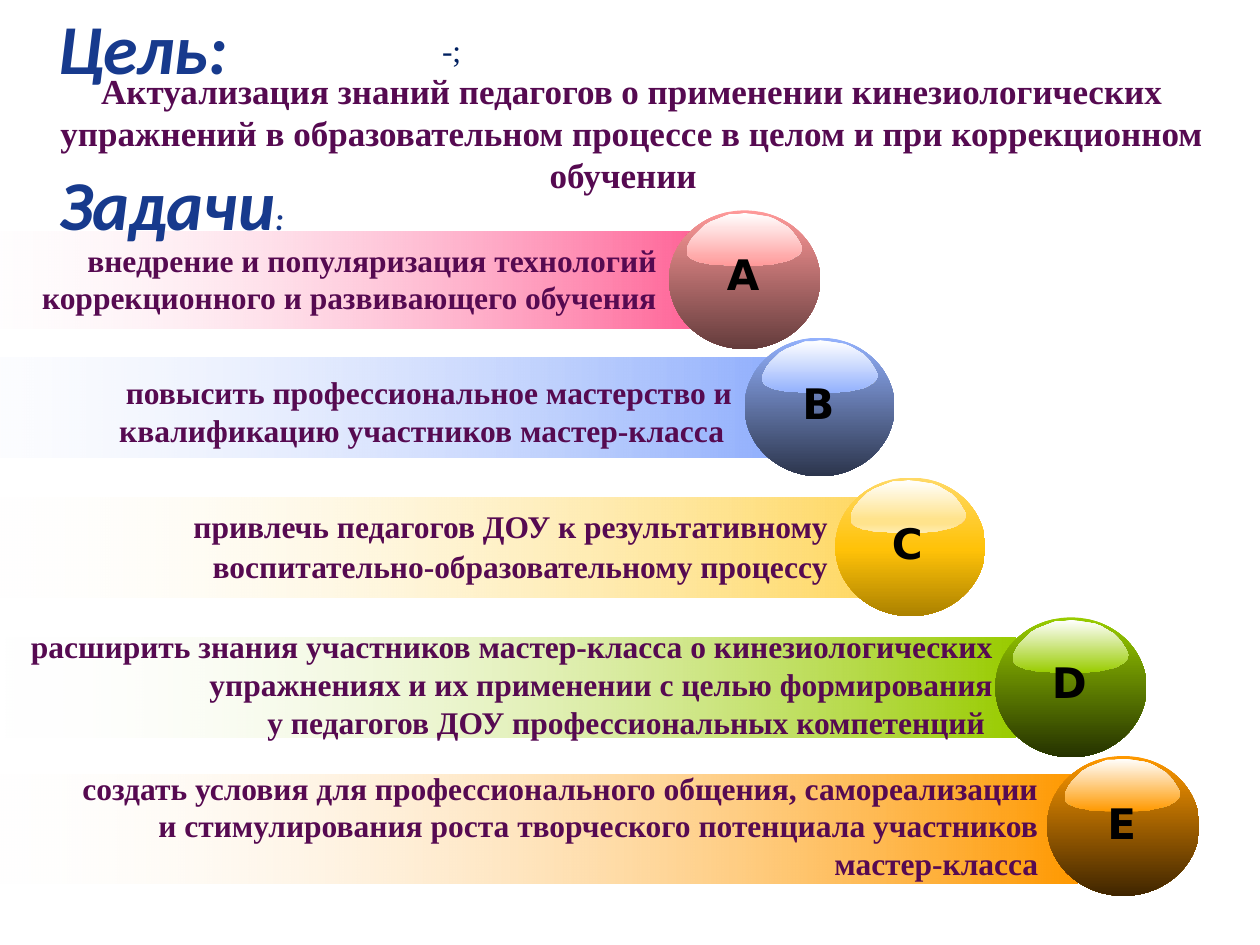
"""Build the slide with the goal and the five tasks of a master class."""
import pptx
import pptx.dml.color
import pptx.enum.shapes
import pptx.enum.text
import pptx.oxml
import pptx.oxml.ns
import pptx.util

Inches = pptx.util.Inches
ALIGN = pptx.enum.text.PP_ALIGN
SERIF = "Times New Roman"
COLORS = {
    "white": "FFFFFF", "black": "000000", "navy": "002060",
    "head": "173A8D", "body": "560A51",
    "pink": "FF6699", "rose": "FF9999", "blue": "93B1FD",
    "sand": "FFD966", "gold": "FFC208", "ochre": "AB8100",
    "cream": "FFE38C", "pale": "FFECB2",
    "green": "99CC00", "orange": "FF9900",
}
CLEAR = (("alpha", 0),)
GLOSS = [
    (90, 24), (91, 26), (92, 28), (91, 30), (90, 32), (88, 34), (86, 35),
    (83, 37), (80, 38), (76, 39), (71, 40), (67, 41), (62, 41), (57, 42),
    (33, 42), (28, 41), (20, 41), (16, 40), (10, 39), (5, 37), (3, 36),
    (1, 34), (0, 32), (0, 29), (1, 26), (3, 22), (6, 18), (10, 14),
    (14, 10), (19, 7), (24, 5), (29, 3), (34, 1), (40, 1), (46, 0),
    (53, 1), (59, 2), (65, 3), (70, 5), (75, 8), (80, 11), (84, 15),
    (87, 19),
]


def shade(part):
    """Return the colour changes that darken a tone to a part of itself."""
    return (("gamma", None), ("shade", part), ("invGamma", None))


def blend(shape, stops, angle):
    """Fill a shape with a gradient and take its line and shadow off."""
    shape.shadow.inherit = False
    shape.line.fill.background()
    shape.fill.gradient()
    shape.fill.gradient_angle = angle
    items = shape._element.spPr.find(".//" + pptx.oxml.ns.qn("a:gsLst"))
    for item in list(items):
        items.remove(item)
    space = pptx.oxml.ns.nsdecls("a")
    for place, name, *changes in stops:
        inner = "".join(
            f"<a:{tag}/>" if value is None else f'<a:{tag} val="{value}"/>'
            for tag, value in (changes[0] if changes else ()))
        items.append(pptx.oxml.parse_xml(
            f'<a:gs {space} pos="{place * 1000}">'
            f'<a:srgbClr val="{COLORS[name]}">{inner}</a:srgbClr></a:gs>'))


def style(run, size, color, font=SERIF, bold=True, italic=False):
    """Set the font of a run."""
    face = run.font
    face.name, face.size = font, pptx.util.Pt(size)
    face.bold, face.italic = bold, italic
    face.color.rgb = pptx.dml.color.RGBColor.from_string(COLORS[color])


def write(shapes, box, text, size, color, align=None, ls=None, after=None,
          wrap=True, **look):
    """Add a text box in one style and return it."""
    area = shapes.add_textbox(*map(Inches, box))
    frame = area.text_frame
    frame.word_wrap = wrap
    frame.auto_size = pptx.enum.text.MSO_AUTO_SIZE.SHAPE_TO_FIT_TEXT
    frame.text = text
    for para in frame.paragraphs:
        para.alignment = align
        if ls:
            para.line_spacing = ls
        if after:
            para.space_after = pptx.util.Pt(after)
        for run in para.runs:
            style(run, size, color, **look)
    return area


def bar(shapes, box, color):
    """Add a bar that fades in from the left."""
    shape = shapes.add_shape(
        pptx.enum.shapes.MSO_SHAPE.RECTANGLE, *map(Inches, box))
    blend(shape, [(0, "white", CLEAR), (100, color)], 0)


def ball(shapes, box, stops, shine, inset):
    """Add a glossy ball."""
    shape = shapes.add_shape(
        pptx.enum.shapes.MSO_SHAPE.OVAL, *map(Inches, box))
    blend(shape, stops, 270)
    pen = shapes.build_freeform(*GLOSS[0], scale=Inches(0.01))
    pen.add_line_segments(GLOSS[1:], close=True)
    gloss = pen.convert_to_shape(
        Inches(box[0] + inset), Inches(box[1] + 0.02))
    blend(gloss, shine, 270)


def task(slide, strip, tint, spot, stops, shine, label, mark, box, text,
         inset=0.14, **look):
    """Add one task: its bar, lettered ball and wording."""
    bar(slide.shapes, strip, tint)
    group = slide.shapes.add_group_shape().shapes
    ball(group, spot, stops, shine, inset)
    write(group, mark, label, 24, "black", font="DejaVu Sans", wrap=False)
    write(slide.shapes, box, text, 18, "body", ALIGN.RIGHT, **look)


def tone(color, part):
    """Return the ball stops and the gloss stops for one colour."""
    return ([(0, color), (100, color, shade(part))],
            [(0, "white"), (100, color)])


def main():
    """Build and save the slide."""
    deck = pptx.Presentation()
    deck.slide_width, deck.slide_height = Inches(10), Inches(7.5)
    slide = deck.slides.add_slide(deck.slide_layouts[6])
    shapes = slide.shapes
    title = write(shapes, (0.24, 0.01, 9.55, 0.8), " Цель:", 40, "head",
                  ls=0.9, font="Calibri", italic=True).text_frame
    title.auto_size = pptx.enum.text.MSO_AUTO_SIZE.NONE
    title.vertical_anchor = pptx.enum.text.MSO_ANCHOR.MIDDLE

    task(slide, (-0.61, 1.84, 6.1, 0.77), "pink", (5.31, 1.67, 1.2, 1.1),
         *tone("rose", 39216), "A", (5.67, 1.92, 0.46, 0.5),
         (0.12, 1.86, 5.19, 0.71),
         "внедрение и популяризация технологий коррекционного и "
         "развивающего обучения")
    task(slide, (-1.21, 2.84, 7.31, 0.79), "blue", (5.91, 2.68, 1.19, 1.1),
         *tone("blue", 30196), "B", (6.27, 2.95, 0.46, 0.5),
         (-0.61, 2.91, 6.52, 0.71),
         "повысить профессиональное мастерство и квалификацию участников "
         "мастер-класса ")
    task(slide, (-0.32, 3.95, 7.14, 0.79), "sand", (6.63, 3.79, 1.19, 1.1),
         [(0, "sand"), (52, "gold"), (100, "ochre")],
         [(0, "white"), (74, "cream"), (83, "cream"), (100, "pale")],
         "С", (6.98, 4.06, 0.45, 0.5), (0.9, 3.95, 5.77, 0.75),
         "привлечь педагогов ДОУ к результативному "
         "воспитательно-образовательному процессу",
         inset=0.12, ls=1.07, after=8)
    task(slide, (0, 5.06, 8.06, 0.79), "green", (7.9, 4.9, 1.2, 1.11),
         *tone("green", 24706), "D", (8.25, 5.16, 0.48, 0.5),
         (0, 4.93, 7.98, 1.01),
         "расширить знания участников мастер-класса о кинезиологических "
         "упражнениях и их применении с целью формирования\n"
         " у педагогов ДОУ профессиональных компетенций ")
    task(slide, (-0.32, 6.15, 8.87, 0.86), "orange", (8.31, 6, 1.21, 1.11),
         *tone("orange", 24706), "Е", (8.69, 6.28, 0.41, 0.5),
         (0.41, 6.05, 7.93, 1.01),
         "создать условия для профессионального общения, самореализации и "
         "стимулирования роста творческого потенциала участников "
         "мастер-класса")

    write(shapes, (3.41, 0.2, 9.55, 0.4), "-;", 18, "navy", bold=False)
    write(shapes, (0.24, 0.5, 9.55, 1.11),
          "Актуализация знаний педагогов о применении кинезиологических "
          "упражнений в образовательном процессе в целом и при "
          "коррекционном обучении  ", 20, "body", ALIGN.CENTER)
    goals = write(shapes, (0.37, 1.18, 2.11, 0.79), "Задачи", 40, "head",
                  ls=1.07, after=8, font="Calibri", italic=True)
    colon = goals.text_frame.paragraphs[0].add_run()
    colon.text = ":"
    style(colon, 18, "head", font="Calibri", italic=True)
    deck.save("out.pptx")


if __name__ == "__main__":
    main()
